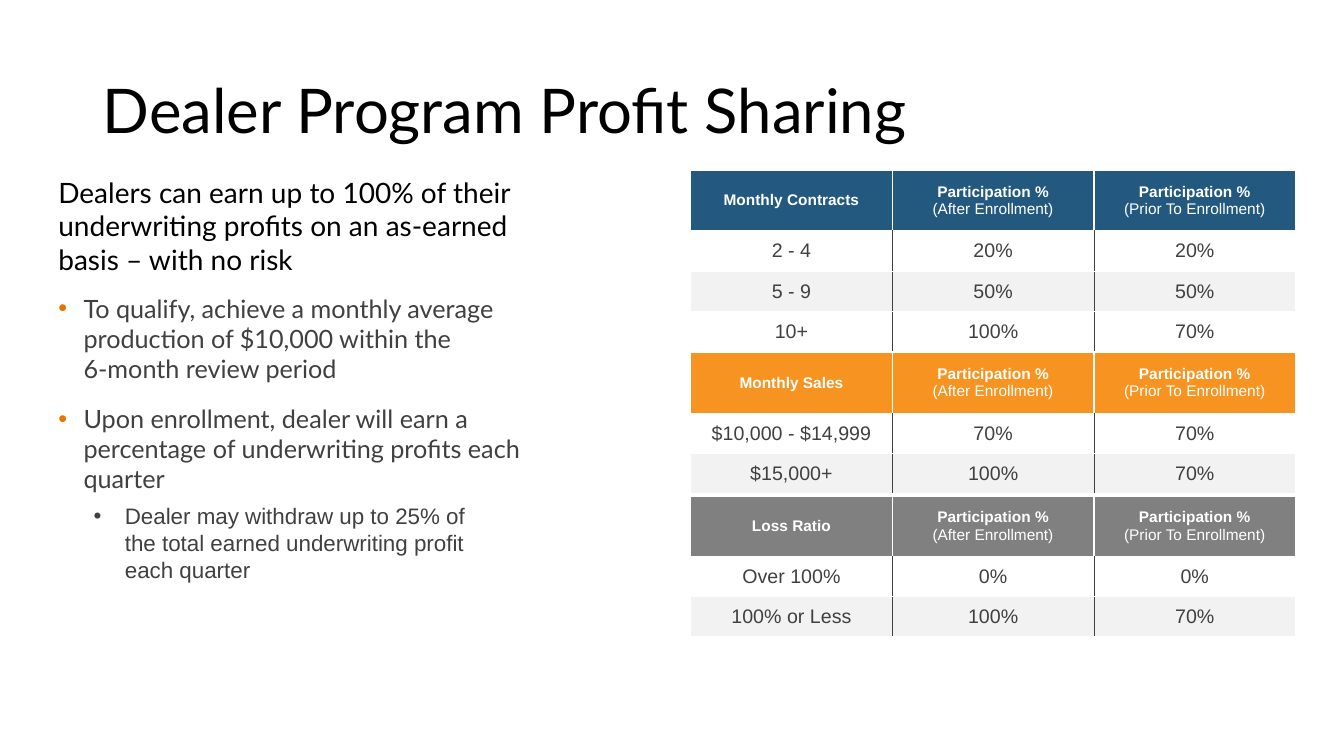
import copy

from lxml import etree
from pptx import Presentation
from pptx.dml.color import RGBColor
from pptx.enum import text
from pptx.oxml.ns import qn
from pptx.util import Inches, Pt

BLACK = RGBColor(0x00, 0x00, 0x00)
WHITE = RGBColor(0xFF, 0xFF, 0xFF)
DARK = RGBColor(0x40, 0x40, 0x40)
BAND = RGBColor(0xF2, 0xF2, 0xF2)
BLUE = RGBColor(0x24, 0x59, 0x7F)
ORANGE = RGBColor(0xF7, 0x94, 0x21)
GRAY = RGBColor(0x80, 0x80, 0x80)
BULLET = RGBColor(0xE9, 0x72, 0x00)

AFTER = "Participation %\n(After Enrollment)"
PRIOR = "Participation %\n(Prior To Enrollment)"

# Top, header colour, first heading, body rows
TABLES = [
    (1.69, BLUE, "Monthly Contracts",
     [("2 - 4", "20%", "20%"), ("5 - 9", "50%", "50%"), ("10+", "100%", "70%")]),
    (3.5, ORANGE, "Monthly Sales",
     [("$10,000 - $14,999", "70%", "70%"), ("$15,000+", "100%", "70%")]),
    (4.92, GRAY, "Loss Ratio",
     [("Over 100%", "0%", "0%"), ("100% or Less", "100%", "70%")]),
]

# Text, size, font, colour, space before, space after, left, hanging, bullet colour
POINTS = [
    ("Dealers can earn up to 100% of their underwriting profits on an as-earned "
     "basis – with no risk", 20, "Lato", BLACK, 0, 6, 0, 0, None),
    ("To qualify, achieve a monthly average production of $10,000 within the \n"
     "6-month review period", 18, "Lato", DARK, 6, 8, 0.25, 0.25, BULLET),
    ("Upon enrollment, dealer will earn a percentage of underwriting profits "
     "each quarter", 18, "Lato", DARK, 6, 6, 0.25, 0.25, BULLET),
    ("Dealer may withdraw up to 25% of \nthe total earned underwriting profit \n"
     "each quarter", 16, "Arial", DARK, 0, 6, 0.66, 0.31, DARK),
]


def format_runs(p, size, font, color):
    for r in p.runs:
        r.font.size = Pt(size)
        r.font.name = font
        r.font.color.rgb = color
    # Line breaks take the size of the text around them
    for br in p._p.findall(qn("a:br")):
        br.insert(0, copy.deepcopy(p.runs[0]._r.rPr))


def add_solid_fill(parent, color):
    fill = etree.SubElement(parent, qn("a:solidFill"))
    etree.SubElement(fill, qn("a:srgbClr"), val=str(color))


def set_bullet(p, left, hanging, color):
    pPr = p._p.get_or_add_pPr()
    pPr.set("marL", str(Inches(left)))
    pPr.set("indent", str(-Inches(hanging)))
    if color is None:
        etree.SubElement(pPr, qn("a:buNone"))
        return
    clr = etree.SubElement(pPr, qn("a:buClr"))
    etree.SubElement(clr, qn("a:srgbClr"), val=str(color))
    etree.SubElement(pPr, qn("a:buFont"), typeface="Arial")
    etree.SubElement(pPr, qn("a:buChar"), char="•")


def set_borders(cell, left, right):
    tcPr = cell._tc.get_or_add_tcPr()
    for i, (side, color) in enumerate((("lnL", left), ("lnR", right), ("lnT", WHITE))):
        width = 0.5 if color == DARK else 1
        ln = etree.Element(qn("a:" + side), w=str(Pt(width)))
        add_solid_fill(ln, color)
        tcPr.insert(i, ln)


def fill_cell(cell, value, size, color, fill):
    cell.vertical_anchor = text.MSO_ANCHOR.MIDDLE
    cell.margin_left = cell.margin_right = Inches(0.09)
    cell.margin_top = cell.margin_bottom = Inches(0.04)
    if fill is None:
        cell.fill.background()
    else:
        cell.fill.solid()
        cell.fill.fore_color.rgb = fill
    p = cell.text_frame.paragraphs[0]
    p.text = value
    p.alignment = text.PP_ALIGN.CENTER
    format_runs(p, size, "Arial", color)
    return p


def add_rate_table(slide, top, header_color, heading, rows):
    height = 0.6 + 0.4 * len(rows)
    frame = slide.shapes.add_table(len(rows) + 1, 3, Inches(6.85), Inches(top),
                                   Inches(6), Inches(height))
    table = frame.table
    table.horz_banding = False
    for i, row in enumerate([(heading, AFTER, PRIOR)] + rows):
        table.rows[i].height = Inches(0.4 if i else 0.6)
        for j, value in enumerate(row):
            cell = table.cell(i, j)
            if i == 0:
                p = fill_cell(cell, value, 11, WHITE, header_color)
                for n, r in enumerate(p.runs):
                    r.font.bold = n == 0
            else:
                p = fill_cell(cell, value, 14, DARK, None if i % 2 else BAND)
                p.runs[0].font.bold = False
            set_borders(cell, DARK if i and j > 0 else WHITE,
                        DARK if i and j < 2 else WHITE)


def add_points(slide):
    box = slide.shapes.add_textbox(Inches(0.48), Inches(1.69), Inches(4.82), Inches(4.76))
    tf = box.text_frame
    tf.word_wrap = True
    for i, (words, size, font, color, before, after, left, hanging, bullet) in enumerate(POINTS):
        p = tf.add_paragraph() if i else tf.paragraphs[0]
        p.text = words
        set_bullet(p, left, hanging, bullet)
        p.level = 1 if left > 0.5 else 0
        p.space_before = Pt(before)
        p.space_after = Pt(after)
        format_runs(p, size, font, color)


def set_title(slide):
    title = slide.shapes.title
    title.left, title.top = Inches(0.92), Inches(0.4)
    title.width, title.height = Inches(11.5), Inches(1.45)
    tf = title.text_frame
    tf.text = "Dealer Program Profit Sharing"
    tf.auto_size = text.MSO_AUTO_SIZE.NONE
    tf.vertical_anchor = text.MSO_ANCHOR.MIDDLE
    p = tf.paragraphs[0]
    p.alignment = text.PP_ALIGN.LEFT
    p.line_spacing = 0.9
    format_runs(p, 44, "Lato", BLACK)


def main():
    prs = Presentation()
    prs.slide_width, prs.slide_height = Inches(13.33), Inches(7.5)
    slide = prs.slides.add_slide(prs.slide_layouts[5])
    set_title(slide)
    add_points(slide)
    for table in TABLES:
        add_rate_table(slide, *table)
    prs.save("out.pptx")


if __name__ == "__main__":
    main()
